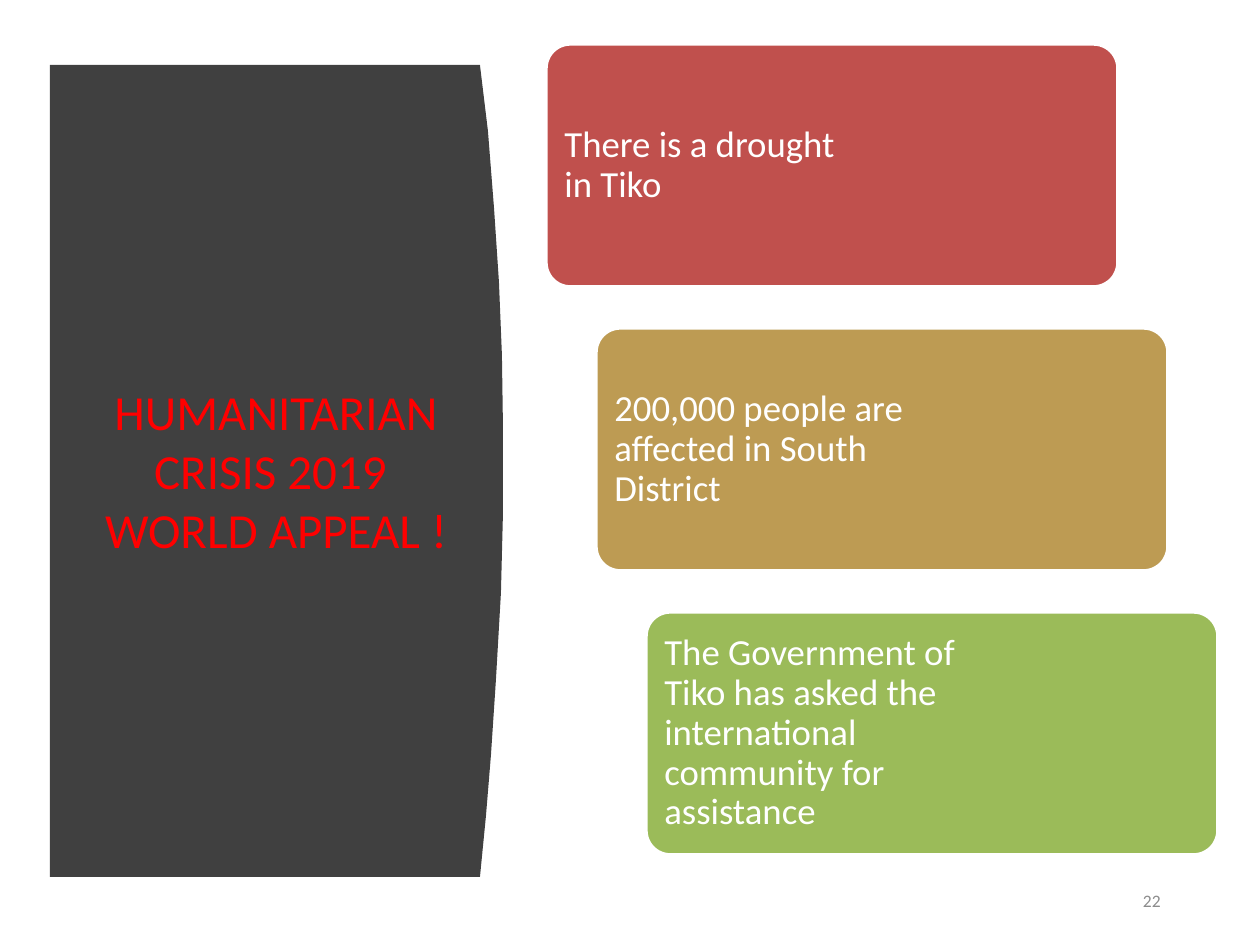
from pptx import Presentation
from pptx import util as u
from pptx.dml.color import RGBColor
from pptx.enum import shapes, text

PX = 914400 // 126
FONT = "Calibri"
WHITE = "FFFFFF"

TITLE = "HUMANITARIAN CRISIS 2019 \vWORLD APPEAL !"
PAGE_NUMBER = "22"
CARDS = [
    ("There is a drought in Tiko", "C0504D", 310),
    ("200,000 people are affected in South District", "BD9B53", 349),
    ("The Government of Tiko has asked the international community for assistance", "9BBB59", 349),
]
PANEL_LEFT, PANEL_TOP, PANEL_BOTTOM = 50, 65, 877
PANEL_EDGE = [
    (480, 65), (488, 131), (494, 207), (499, 282), (502, 355), (503, 427),
    (503, 513), (501, 593), (496, 680), (491, 755), (486, 816), (480, 877),
]
CARD_LEFT, CARD_TOP, CARD_WIDTH, CARD_HEIGHT = 546, 44, 572, 243
STEP_X, STEP_Y = 50, 284
CARD_PADDING = 7


def color(value):
    return RGBColor.from_string(value)


def px(*lengths):
    return [u.Emu(length * PX) for length in lengths]


def paint(shape, fill):
    shape.shadow.inherit = False
    shape.fill.solid()
    shape.fill.fore_color.rgb = color(fill)


def add_text(slide, box, content, size, font_color, align, inset=None):
    frame = slide.shapes.add_textbox(*px(*box)).text_frame
    frame.word_wrap = True
    frame.vertical_anchor = text.MSO_ANCHOR.MIDDLE
    if inset is not None:
        frame.margin_left = frame.margin_right = u.Inches(inset)
        frame.margin_top = frame.margin_bottom = u.Inches(inset)
    paragraph = frame.paragraphs[0]
    paragraph.text = content
    paragraph.alignment = align
    paragraph.font.name = FONT
    paragraph.font.size = u.Pt(size)
    paragraph.font.color.rgb = color(font_color)
    return paragraph


def add_panel(slide):
    builder = slide.shapes.build_freeform(PANEL_LEFT, PANEL_TOP, scale=PX)
    builder.add_line_segments(PANEL_EDGE + [(PANEL_LEFT, PANEL_BOTTOM)], close=True)
    panel = builder.convert_to_shape()
    paint(panel, "404040")
    panel.line.fill.background()


def add_card(slide, index, content, fill, text_width):
    left = CARD_LEFT + index * STEP_X
    top = CARD_TOP + index * STEP_Y
    card = slide.shapes.add_shape(
        shapes.MSO_SHAPE.ROUNDED_RECTANGLE, *px(left, top, CARD_WIDTH, CARD_HEIGHT))
    card.adjustments[0] = 0.1
    paint(card, fill)
    card.line.color.rgb = color(WHITE)
    card.line.width = u.Pt(2)
    box = (left + CARD_PADDING, top + CARD_PADDING,
           text_width, CARD_HEIGHT - 2 * CARD_PADDING)
    paragraph = add_text(slide, box, content, 21, WHITE, text.PP_ALIGN.LEFT, 0.09)
    paragraph.line_spacing = 0.9


def main():
    presentation = Presentation()
    presentation.slide_width, presentation.slide_height = px(1260, 945)
    slide = presentation.slides.add_slide(presentation.slide_layouts[6])
    add_panel(slide)
    add_text(slide, (89, 140, 374, 660), TITLE, 28, "FF0000", text.PP_ALIGN.CENTER)
    add_text(slide, (1109, 876, 64, 50), PAGE_NUMBER, 10, "8C8C8C", text.PP_ALIGN.RIGHT)
    for index, card in enumerate(CARDS):
        add_card(slide, index, *card)
    presentation.save("out.pptx")


if __name__ == "__main__":
    main()
